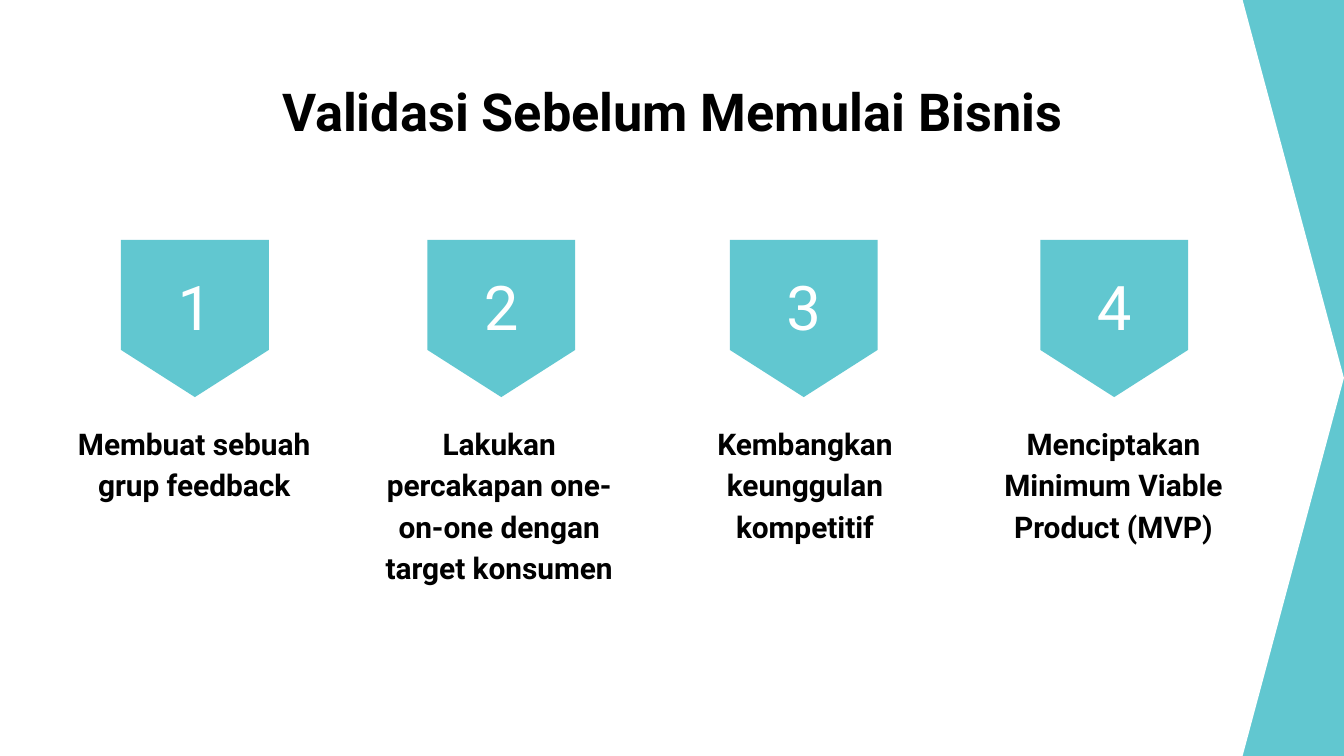
import pptx
import pptx.util
import pptx.dml.color
import pptx.enum.shapes
import pptx.enum.text
from dataclasses import dataclass

Inches = pptx.util.Inches
RGBColor = pptx.dml.color.RGBColor


@dataclass(frozen=True)
class Theme:
    font: str = "Roboto"
    teal: RGBColor = RGBColor(0x61, 0xC7, 0xD0)
    white: RGBColor = RGBColor(255, 255, 255)
    black: RGBColor = RGBColor(0, 0, 0)
    title_size: int = 28
    number_size: int = 33
    caption_size: int = 16


theme = Theme()


def add_pentagon(page, left, top, width, height, point, color):
    pentagon = page.shapes.add_shape(
        pptx.enum.shapes.MSO_SHAPE.PENTAGON,
        Inches(left), Inches(top), Inches(width), Inches(height))
    pentagon.adjustments[0] = point
    pentagon.shadow.inherit = False
    pentagon.fill.solid()
    pentagon.fill.fore_color.rgb = color
    pentagon.line.fill.background()
    return pentagon


def add_text(page, left, top, width, height, text, size, color, bold=False):
    box = page.shapes.add_textbox(
        Inches(left), Inches(top), Inches(width), Inches(height))
    frame = box.text_frame
    frame.word_wrap = True
    frame.margin_left = frame.margin_right = Inches(0.1)
    frame.margin_top = frame.margin_bottom = Inches(0.1)
    para = frame.paragraphs[0]
    para.text = text
    para.alignment = pptx.enum.text.PP_ALIGN.CENTER
    para.font.name = theme.font
    para.font.size = pptx.util.Pt(size)
    para.font.bold = bold
    para.font.color.rgb = color
    return frame


# Page with a white arrow panel on teal
deck = pptx.Presentation()
deck.slide_width, deck.slide_height = Inches(10), Inches(5.625)
page = deck.slides.add_slide(deck.slide_layouts[6])
page.background.fill.solid()
page.background.fill.fore_color.rgb = theme.teal
add_pentagon(page, 0, 0, 10, 5.625, 0.134, theme.white)

# Title
add_text(page, 0.78, 0.49, 8.44, 0.63, "Validasi Sebelum Memulai Bisnis",
         theme.title_size, theme.black, bold=True)

# Steps: badge centre, caption left, caption width, caption
steps = [
    (1.45, 0.40, 2.09, "Membuat sebuah grup feedback"),
    (3.73, 2.75, 1.93, "Lakukan percakapan one-on-one dengan target konsumen"),
    (5.98, 5.00, 1.98, "Kembangkan keunggulan kompetitif"),
    (8.29, 7.34, 1.89, "Menciptakan Minimum Viable Product (MVP)"),
]
badge_length, badge_width, number_side = 1.17, 1.1, 0.53

for number, (center, left, width, caption) in enumerate(steps, start=1):
    # Badge pointing down
    badge = add_pentagon(page, center - badge_length / 2, 1.82,
                         badge_length, badge_width, 0.319, theme.teal)
    badge.rotation = 90

    # Number
    frame = add_text(page, center - number_side / 2, 2.01, number_side,
                     number_side, str(number), theme.number_size, theme.white)
    frame.vertical_anchor = pptx.enum.text.MSO_ANCHOR.MIDDLE

    # Caption
    frame = add_text(page, left, 3.03, width, 0.57, caption,
                     theme.caption_size, theme.black, bold=True)
    frame.paragraphs[0].line_spacing = 1.15
    frame.paragraphs[0].space_after = pptx.util.Pt(16)

deck.save("out.pptx")
